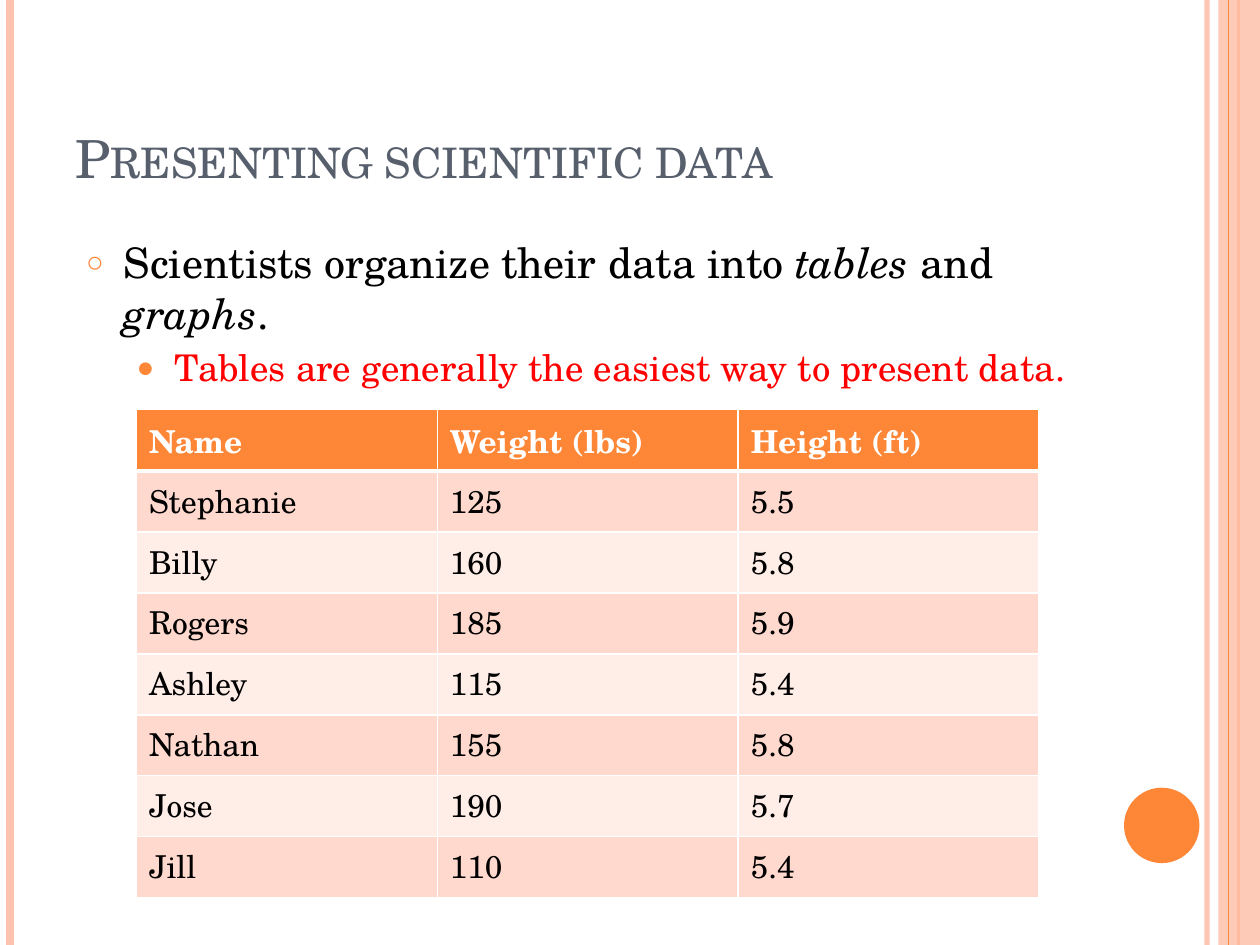
"""Build a slide that presents scientific data in a table."""
from dataclasses import dataclass

import lxml.etree
import pptx
import pptx.dml.color
import pptx.enum.shapes
import pptx.enum.text
import pptx.oxml
import pptx.oxml.ns
import pptx.util

Cm = pptx.util.Cm
Pt = pptx.util.Pt
qn = pptx.oxml.ns.qn

FONT = "TeX Gyre Schola"
COLORS = {
    "orange": "FE8637", "peach": "FEC3AE", "slate": "575F6D",
    "black": "000000", "red": "FF0000", "white": "FFFFFF",
    "band_dark": "FFD9CE", "band_light": "FFEDE8",
}
SLIDE_WIDTH, SLIDE_HEIGHT = 25.4, 19.05


@dataclass
class Stripe:
    """A vertical line over the full slide height."""
    x: float
    color: str
    width: float
    opacity: int = 100


@dataclass
class Panel:
    """A filled decoration without an outline."""
    kind: pptx.enum.shapes.MSO_SHAPE
    box: tuple[float, float, float, float]
    color: str
    opacity: int = 100


@dataclass
class Bullet:
    """A list paragraph with its marker and (text, italic) runs."""
    runs: list[tuple[str, bool]]
    level: int
    size: int
    color: str
    marker: str
    marker_percent: int
    indent: float
    space_before: float | None = None


DECORATIONS = [
    Stripe(24.33, "peach", 3, 93),
    Stripe(0.2, "peach", 4.5),
    Stripe(24.97, "orange", 1.5),
    Panel(pptx.enum.shapes.MSO_SHAPE.RECTANGLE, (24.56, 0, 0.84, SLIDE_HEIGHT), "peach", 87),
    Stripe(24.77, "orange", 0.75),
    Panel(pptx.enum.shapes.MSO_SHAPE.OVAL, (22.66, 15.88, 1.52, 1.52), "orange"),
]
BULLETS = [
    Bullet([("Scientists organize their data into ", False), ("tables", True),
            (" and ", False), ("graphs", True), (".", False)],
           0, 24, "black", "○", 70, 0.76, 6),
    Bullet([("Tables are generally the easiest way to present data.", False)],
           1, 21, "red", "●", 80, 1.78),
]
ROWS = [
    ("Name", "Weight (lbs)", "Height (ft)"),
    ("Stephanie", "125", "5.5"),
    ("Billy", "160", "5.8"),
    ("Rogers", "185", "5.9"),
    ("Ashley", "115", "5.4"),
    ("Nathan", "155", "5.8"),
    ("Jose", "190", "5.7"),
    ("Jill", "110", "5.4"),
]


def rgb(name: str) -> pptx.dml.color.RGBColor:
    """Return the named colour."""
    return pptx.dml.color.RGBColor.from_string(COLORS[name])


def add_child(parent, tag: str, **attributes: str):
    """Append an XML element and return it."""
    return lxml.etree.SubElement(parent, qn(tag), attributes)


def set_opacity(element, percent: int) -> None:
    """Make the solid colour inside an element partly transparent."""
    if percent < 100:
        add_child(element.find(".//" + qn("a:srgbClr")), "a:alpha", val=str(percent * 1000))


def add_run(paragraph, text: str, size: int, color: str, bold: bool = False, italic: bool = False):
    """Add a formatted run and return it."""
    run = paragraph.add_run()
    run.text = text
    run.font.name = FONT
    run.font.size = Pt(size)
    run.font.bold = bold
    run.font.italic = italic
    run.font.color.rgb = rgb(color)
    return run


def place(shape, left: float, top: float, width: float, height: float) -> None:
    """Move and size a shape."""
    shape.left, shape.top, shape.width, shape.height = map(Cm, (left, top, width, height))


def draw_stripe(slide, stripe: Stripe) -> None:
    """Draw a vertical line."""
    line = slide.shapes.add_connector(
        pptx.enum.shapes.MSO_CONNECTOR.STRAIGHT,
        Cm(stripe.x), Cm(0), Cm(stripe.x), Cm(SLIDE_HEIGHT))
    line.line.color.rgb = rgb(stripe.color)
    line.line.width = Pt(stripe.width)
    properties = line._element.spPr
    set_opacity(properties, stripe.opacity)
    add_child(properties, "a:effectLst")


def draw_panel(slide, panel: Panel) -> None:
    """Draw a filled shape."""
    shape = slide.shapes.add_shape(panel.kind, *map(Cm, panel.box))
    shape.shadow.inherit = False
    shape.fill.solid()
    shape.fill.fore_color.rgb = rgb(panel.color)
    shape.line.fill.background()
    set_opacity(shape._element.spPr, panel.opacity)


def write_title(title) -> None:
    """Fill the title placeholder."""
    place(title, 1.27, 0.76, 20.75, 3.18)
    title.text_frame.auto_size = pptx.enum.text.MSO_AUTO_SIZE.NONE
    title.text_frame.vertical_anchor = pptx.enum.text.MSO_ANCHOR.BOTTOM
    paragraph = title.text_frame.paragraphs[0]
    paragraph.alignment = pptx.enum.text.PP_ALIGN.LEFT
    run = add_run(paragraph, "Presenting scientific data", 30, "slate")
    run._r.get_or_add_rPr().set("cap", "small")


def write_bullet(paragraph, bullet: Bullet) -> None:
    """Write one list paragraph."""
    paragraph.level = bullet.level
    if bullet.space_before is not None:
        paragraph.space_before = Pt(bullet.space_before)
    properties = paragraph._p.get_or_add_pPr()
    properties.set("marL", str(Cm(bullet.indent)))
    properties.set("indent", str(Cm(-0.76)))
    add_child(add_child(properties, "a:buClr"), "a:srgbClr", val=COLORS["orange"])
    add_child(properties, "a:buSzPct", val=str(bullet.marker_percent * 1000))
    add_child(properties, "a:buChar", char=bullet.marker)
    for text, italic in bullet.runs:
        add_run(paragraph, text, bullet.size, bullet.color, italic=italic)


def write_body(body) -> None:
    """Fill the body placeholder."""
    place(body, 1.48, 4.65, 21.8, 13.55)
    frame = body.text_frame
    frame.auto_size = pptx.enum.text.MSO_AUTO_SIZE.NONE
    for index, bullet in enumerate(BULLETS):
        write_bullet(frame.add_paragraph() if index else frame.paragraphs[0], bullet)


def set_borders(cell, top: int, bottom: int) -> None:
    """Give a cell white borders, with widths in points."""
    properties = cell._tc.get_or_add_tcPr()
    for side, width in {"L": 1, "R": 1, "T": top, "B": bottom}.items():
        border = add_child(properties, f"a:ln{side}", w=str(Pt(width)))
        add_child(add_child(border, "a:solidFill"), "a:srgbClr", val=COLORS["white"])


def draw_table(slide) -> None:
    """Draw the banded data table."""
    table = slide.shapes.add_table(
        len(ROWS), len(ROWS[0]), Cm(2.75), Cm(8.26), Cm(18.2), Cm(9.83)).table
    for row_index, values in enumerate(ROWS):
        header = row_index == 0
        band = "orange" if header else ("band_light", "band_dark")[row_index % 2]
        for column_index, value in enumerate(values):
            cell = table.cell(row_index, column_index)
            set_borders(cell, 3 if row_index == 1 else 1, 3 if header else 1)
            cell.fill.solid()
            cell.fill.fore_color.rgb = rgb(band)
            add_run(cell.text_frame.paragraphs[0], value, 18,
                    "white" if header else "black", bold=header)


def main() -> None:
    """Build and save the presentation."""
    presentation = pptx.Presentation()
    presentation.slide_width, presentation.slide_height = Cm(SLIDE_WIDTH), Cm(SLIDE_HEIGHT)
    slide = presentation.slides.add_slide(presentation.slide_layouts[1])
    for decoration in DECORATIONS:
        draw = draw_stripe if isinstance(decoration, Stripe) else draw_panel
        draw(slide, decoration)
    write_title(slide.shapes.title)
    write_body(slide.placeholders[1])
    draw_table(slide)
    presentation.save("out.pptx")


if __name__ == "__main__":
    main()
